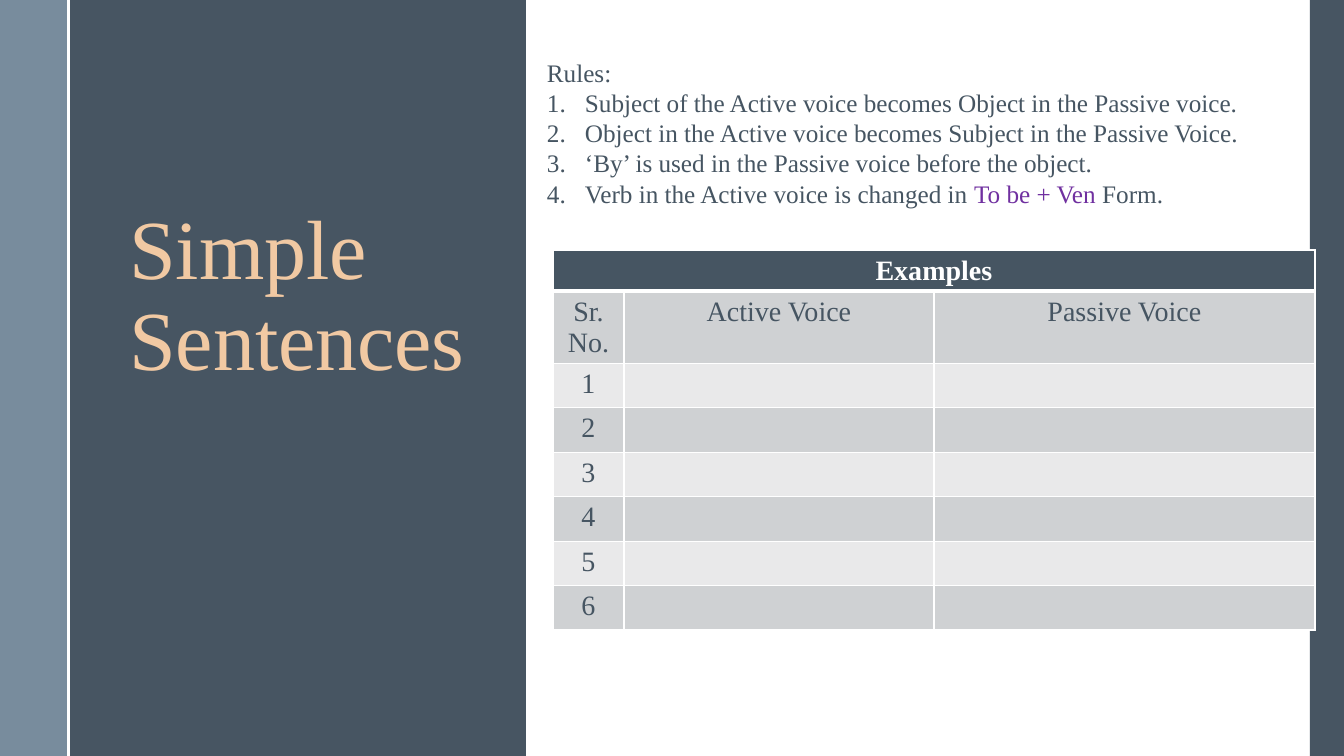
from dataclasses import dataclass
from typing import Any

from lxml import etree
from pptx import Presentation
from pptx import util as u
from pptx.dml.color import RGBColor
from pptx.enum import shapes, text
from pptx.oxml import ns

EMU_PER_PX = 914400 / 100.8
PAGE_W, PAGE_H = 1344, 756
FONT = "Times New Roman"
COLORS = {
    "slate": "475562",
    "ink": "465562",
    "steel": "6A8093",
    "peach": "F1C9A3",
    "purple": "7030A0",
    "white": "FFFFFF",
    "band_dark": "CFD1D3",
    "band_light": "E9E9EA",
}


@dataclass(frozen=True)
class Panel:
    left: int
    width: int
    color: str
    opacity: int = 100


@dataclass(frozen=True)
class Span:
    words: str
    color: str = "ink"


PANELS = [
    Panel(69, 457, "slate"),
    Panel(0, 67, "steel", 90),
    Panel(1310, 34, "slate"),
]
RULES = [
    [Span("Subject of the Active voice becomes Object in the Passive voice.")],
    [Span("Object in the Active voice becomes Subject in the Passive Voice.")],
    [Span("‘By’ is used in the Passive voice before the object.")],
    [Span("Verb in the Active voice is changed in "),
     Span("To be + Ven ", "purple"), Span("Form.")],
]
HEADINGS = ["Sr. No.", "Active Voice", "Passive Voice"]
COLUMN_WIDTHS = [71, 310, 381]
EXAMPLE_COUNT = 6
ROW_HEIGHT = 41


def px(length: int) -> u.Emu:
    return u.Emu(round(length * EMU_PER_PX))


def rgb(name: str) -> RGBColor:
    return RGBColor.from_string(COLORS[name])


def apply(target: Any, values: dict[str, Any]) -> None:
    for name, value in values.items():
        setattr(target, name, value)


def child(parent: Any, tag: str, **attributes: str) -> Any:
    return etree.SubElement(parent, ns.qn(tag), attributes)


def write_span(para: Any, span: Span, size: int, bold: bool = False) -> None:
    run = para.add_run()
    run.text = span.words
    apply(run.font, {"name": FONT, "size": u.Pt(size), "bold": bold})
    run.font.color.rgb = rgb(span.color)


def draw_panel(page: Any, panel: Panel) -> None:
    box = page.shapes.add_shape(shapes.MSO_SHAPE.RECTANGLE, px(panel.left), 0,
                                px(panel.width), px(PAGE_H))
    box.shadow.inherit = False
    box.fill.solid()
    box.fill.fore_color.rgb = rgb(panel.color)
    box.line.fill.background()
    if panel.opacity < 100:
        color = box.element.spPr.find(".//" + ns.qn("a:srgbClr"))
        child(color, "a:alpha", val=str(panel.opacity * 1000))


def draw_divider(page: Any, left: int) -> None:
    line = page.shapes.add_connector(shapes.MSO_CONNECTOR.STRAIGHT,
                                     px(left), 0, px(left), px(PAGE_H))
    line.line.color.rgb = rgb("white")
    line.line.width = u.Pt(1.5)
    child(line.element.spPr, "a:effectLst")


def draw_title(page: Any) -> None:
    title = page.shapes.title
    apply(title, {"left": px(119), "top": px(202),
                  "width": px(387), "height": px(479)})
    apply(title.text_frame, {"word_wrap": True,
                             "auto_size": text.MSO_AUTO_SIZE.NONE,
                             "vertical_anchor": text.MSO_ANCHOR.TOP})
    para = title.text_frame.paragraphs[0]
    apply(para, {"alignment": text.PP_ALIGN.LEFT, "line_spacing": 0.9,
                 "space_before": u.Pt(14)})
    write_span(para, Span("Simple Sentences", "peach"), 60)
    # Bring the title in front of the panels
    title.element.getparent().append(title.element)


def set_borders(cell: Any, top: float, bottom: float) -> None:
    properties = cell._tc.get_or_add_tcPr()
    widths = {"a:lnL": 1, "a:lnR": 1, "a:lnT": top, "a:lnB": bottom}
    for position, (tag, width) in enumerate(widths.items()):
        border = child(properties, tag, w=str(u.Pt(width)))
        child(child(border, "a:solidFill"), "a:srgbClr", val=COLORS["white"])
        properties.insert(position, border)


def fill_cell(cell: Any, words: str, row: int) -> None:
    header = row == 0
    band = "band_dark" if row % 2 else "band_light"
    cell.fill.solid()
    cell.fill.fore_color.rgb = rgb("ink" if header else band)
    set_borders(cell, 3 if row == 1 else 1, 3 if header else 1)
    para = cell.text_frame.paragraphs[0]
    para.alignment = text.PP_ALIGN.CENTER
    para.font.size = u.Pt(20)
    if words:
        write_span(para, Span(words, "white" if header else "ink"), 20, header)


def draw_examples(page: Any) -> None:
    rows = [["Examples", "", ""], HEADINGS]
    rows += [[str(number), "", ""] for number in range(1, EXAMPLE_COUNT + 1)]
    frame = page.shapes.add_table(len(rows), len(COLUMN_WIDTHS), px(553), px(250),
                                  px(sum(COLUMN_WIDTHS)), px(ROW_HEIGHT * len(rows)))
    table = frame.table
    apply(table, {"first_row": False, "horz_banding": False})
    for column, width in zip(table.columns, COLUMN_WIDTHS):
        column.width = px(width)
    for row, entries in enumerate(rows):
        table.rows[row].height = px(ROW_HEIGHT)
        for column, words in enumerate(entries):
            fill_cell(table.cell(row, column), words, row)
    table.cell(0, 0).merge(table.cell(0, len(COLUMN_WIDTHS) - 1))


def draw_rules(page: Any) -> None:
    box = page.shapes.add_textbox(px(537), px(52), px(762), px(163))
    frame = box.text_frame
    apply(frame, {"word_wrap": True,
                  "auto_size": text.MSO_AUTO_SIZE.SHAPE_TO_FIT_TEXT})
    write_span(frame.paragraphs[0], Span("Rules:"), 18)
    for rule in RULES:
        para = frame.add_paragraph()
        properties = para._p.get_or_add_pPr()
        properties.set("marL", str(px(38)))
        properties.set("indent", str(-px(38)))
        child(properties, "a:buFont", typeface="+mj-lt")
        child(properties, "a:buAutoNum", type="arabicPeriod")
        for span in rule:
            write_span(para, span, 18)


def main() -> None:
    deck = Presentation()
    apply(deck, {"slide_width": px(PAGE_W), "slide_height": px(PAGE_H)})
    page = deck.slides.add_slide(deck.slide_layouts.get_by_name("Title Only"))
    # Background
    for panel in PANELS:
        draw_panel(page, panel)
    draw_divider(page, 69)
    # Content
    draw_title(page)
    draw_examples(page)
    draw_rules(page)
    deck.save("out.pptx")


if __name__ == "__main__":
    main()
